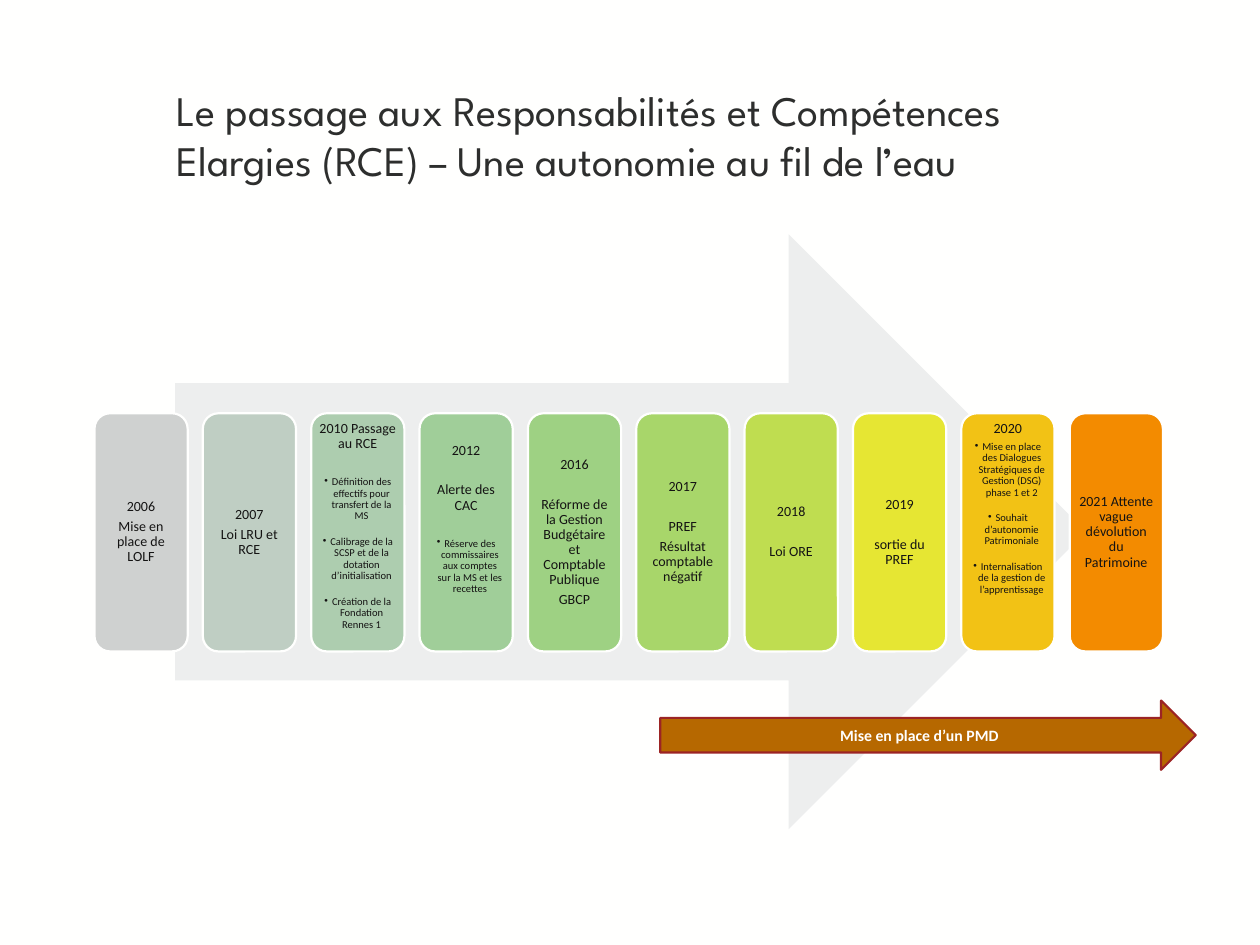
from pptx import Presentation
from pptx.dml.color import RGBColor
from pptx.enum.shapes import MSO_SHAPE as Kind
from pptx.enum.text import MSO_ANCHOR as Anchor, MSO_AUTO_SIZE as Fit, PP_ALIGN as Align
from pptx.oxml.ns import qn
from pptx.util import Inches, Pt
from lxml import etree

PAPER, INK, DARK = "FFFFFE", "141313", "2D2E2D"
LEFT, TOP, STEP, WIDE, HIGH = 0.75, 3.28, 0.86, 0.74, 1.89

# Space before a paragraph, in points
NEAR, FAR, BREAK = 2.8, 14.2, 8.3

# Each step: fill, top inset (None centres the text), lines of (text, space, bullet)
STEPS = [
    ("CFD1D0", None, [("2006", 0, False), ("Mise en place de LOLF", NEAR, False)]),
    ("BFCEC3", None, [("2007", 0, False), ("Loi LRU et RCE", NEAR, False)]),
    ("ADCDAF", 0.03, [
        ("2010 Passage au RCE", 0, False),
        ("Définition des effectifs pour transfert de la MS", FAR, True),
        ("Calibrage de la SCSP et de la dotation d’initialisation", BREAK, True),
        ("Création de la Fondation Rennes 1", BREAK, True)]),
    ("A0CE99", 0.2, [
        ("2012", 0, False),
        ("Alerte des CAC", FAR, False),
        ("Réserve des commissaires aux comptes sur la MS et les recettes", FAR, True)]),
    ("9ED183", None, [
        ("2016", 0, False),
        ("Réforme de la Gestion Budgétaire et Comptable Publique", FAR, False),
        ("GBCP", NEAR, False)]),
    ("A8D66A", None, [
        ("2017", 0, False),
        ("PREF", FAR, False),
        ("Résultat comptable négatif", NEAR, False)]),
    ("BFDD50", None, [("2018", 0, False), ("Loi ORE", FAR, False)]),
    ("E6E633", None, [("2019", 0, False), ("sortie du PREF", FAR, False)]),
    ("F2C215", 0.03, [
        ("2020", 0, False),
        ("Mise en place des Dialogues Stratégiques de Gestion (DSG) phase 1 et 2", NEAR, True),
        ("Souhait d’autonomie Patrimoniale", BREAK, True),
        ("Internalisation de la gestion de l’apprentissage", BREAK, True)]),
    ("F38B00", None, [("2021 Attente vague dévolution du Patrimoine", 0, False)]),
]


def color(code):
    return RGBColor.from_string(code)


class Deck:
    """Holds the style and the current slide."""

    font, head = "Calibri", "League Spartan"

    def __init__(self):
        self.file = Presentation()
        self.file.slide_width, self.file.slide_height = Inches(10), Inches(7.5)
        self.slide = self.file.slides.add_slide(self.file.slide_layouts[5])
        back = self.slide.background.fill
        back.solid()
        back.fore_color.rgb = color(PAPER)

    def label(self, para, text, size, ink, font, bold=False):
        run = para.add_run()
        run.text = text
        run.font.size, run.font.name, run.font.bold = Pt(size), font, bold
        run.font.color.rgb = color(ink)

    def title(self, text, left, top, wide, high):
        box = self.slide.shapes.title
        box.left, box.top = Inches(left), Inches(top)
        box.width, box.height = Inches(wide), Inches(high)
        frame = box.text_frame
        frame.auto_size, frame.vertical_anchor = Fit.NONE, Anchor.TOP
        para = frame.paragraphs[0]
        para.alignment = Align.LEFT
        self.label(para, text, 24, DARK, self.head)

    def shape(self, kind, left, top, wide, high, fill, line=None):
        item = self.slide.shapes.add_shape(
            kind, Inches(left), Inches(top), Inches(wide), Inches(high))
        item.shadow.inherit = False
        item.fill.solid()
        item.fill.fore_color.rgb = color(fill)
        if line:
            item.line.color.rgb = color(line)
            item.line.width = Pt(1.25)
        else:
            item.line.fill.background()
        return item

    def arrow(self, left, top, wide, high, fill, line=None, text=None):
        item = self.shape(Kind.RIGHT_ARROW, left, top, wide, high, fill, line)
        if text:
            para = item.text_frame.paragraphs[0]
            para.alignment = Align.CENTER
            self.label(para, text, 9, PAPER, self.font, True)

    def bullet(self, para):
        props = para._p.get_or_add_pPr()
        props.set("marL", str(Inches(0.06)))
        props.set("indent", str(-Inches(0.06)))
        props.set("lvl", "1")
        etree.SubElement(props, qn("a:buChar")).set("char", "•")

    def card(self, left, fill, inset, lines):
        item = self.shape(Kind.ROUNDED_RECTANGLE, left, TOP, WIDE, HIGH, fill, PAPER)
        frame = item.text_frame
        frame.word_wrap = True
        frame.margin_left = frame.margin_right = frame.margin_bottom = Inches(0.03)
        frame.margin_top = Inches(inset or 0.03)
        frame.vertical_anchor = Anchor.TOP if inset else Anchor.MIDDLE
        for place, (text, space, dot) in enumerate(lines):
            para = frame.add_paragraph() if place else frame.paragraphs[0]
            if dot:
                self.bullet(para)
            para.alignment, para.line_spacing = Align.CENTER, 0.9
            if space:
                para.space_before = Pt(space)
            self.label(para, text, 6 if dot else 8, INK, self.font)


def main():
    deck = Deck()

    # Title
    deck.title("Le passage aux Responsabilités et Compétences Elargies (RCE) "
               "– Une autonomie au fil de l’eau", 1.3, 0.62, 7.87, 1.31)

    # Timeline: wide arrow behind the cards
    deck.arrow(1.39, 1.86, 7.23, 4.72, "EDEEEE")
    for place, step in enumerate(STEPS):
        deck.card(LEFT + place * STEP, *step)

    # Parallel project
    deck.arrow(5.24, 5.56, 4.25, 0.55, "B66800", "9C2424", "Mise en place d’un PMD")

    deck.file.save("out.pptx")


if __name__ == "__main__":
    main()
